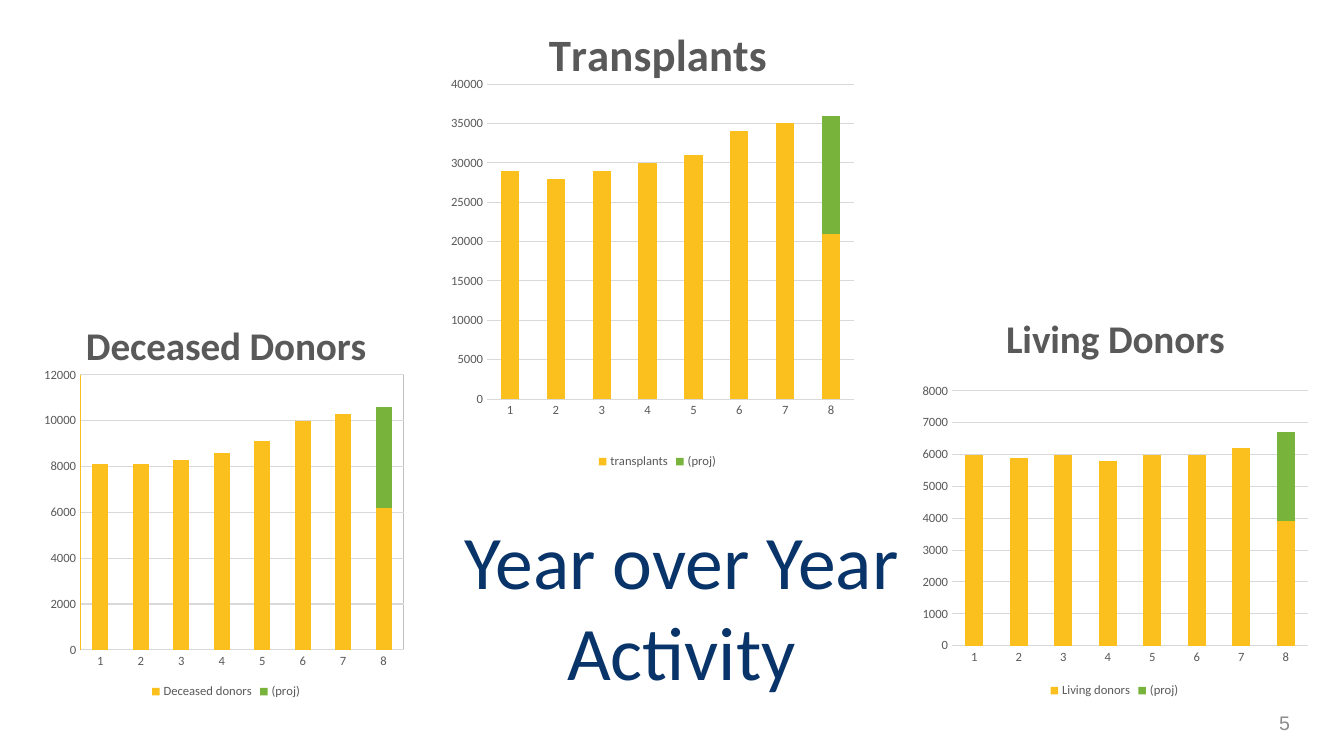
import lxml.etree
import pptx
import pptx.chart.data
import pptx.dml.color
import pptx.enum.chart
import pptx.enum.text
import pptx.oxml
import pptx.oxml.ns
import pptx.util

PX = 914400 / 100.8  # EMU in one px
GOLD, GREEN, GREY, RULE, NAVY = "FBC01E", "78B43C", "595959", "D9D9D9", "083469"
rgb = pptx.dml.color.RGBColor.from_string
qn = pptx.oxml.ns.qn


def write(p, text, size, color, font="Calibri", bold=False, align=None):
    p.alignment = align
    r = p.add_run()
    r.text = text
    r.font.name, r.font.size, r.font.bold = font, pptx.util.Pt(size), bold
    r.font.color.rgb = rgb(color)


def set_layout(parent, index, **values):
    """Give a chart part a manual layout, in fractions of the chart."""
    old = parent.find(qn("c:layout"))
    if old is not None:
        parent.remove(old)
    layout = pptx.oxml.parse_xml(
        '<c:layout %s><c:manualLayout/></c:layout>' % pptx.oxml.ns.nsdecls("c"))
    for tag, value in values.items():
        lxml.etree.SubElement(layout[0], qn("c:" + tag)).set("val", str(value))
    parent.insert(index, layout)


prs = pptx.Presentation()
prs.slide_width, prs.slide_height = int(1344 * PX), int(756 * PX)
s = prs.slides.add_slide(prs.slide_layouts[5])

# title, size, title corner, chart box, plot box, axis top, axis step, series, bars, projected
charts = [
    ("Transplants", 32, (541, 15), (439, 0, 437, 473), (487, 84, 367, 315), 40000, 5000,
     "transplants", (29000, 28000, 29000, 30000, 31000, 34000, 35000, 21000), 15000),
    ("Deceased Donors", 28, (79, 312), (33, 298, 386, 405), (80, 375, 324, 275), 12000, 2000,
     "Deceased donors", (8100, 8100, 8300, 8600, 9100, 10000, 10300, 6200), 4400),
    ("Living Donors", 28, (999, 305), (914, 291, 401, 411), (952, 391, 356, 255), 8000, 1000,
     "Living donors", (6000, 5900, 6000, 5800, 6000, 6000, 6200, 3900), 2800),
]
for title, size, corner, box, plot_box, top, step, name, bars, projected in charts:
    data = pptx.chart.data.CategoryChartData()
    data.categories = [str(n) for n in range(1, 9)]
    data.add_series(name, bars)
    data.add_series("(proj)", [0] * 7 + [projected])
    chart = s.shapes.add_chart(pptx.enum.chart.XL_CHART_TYPE.COLUMN_STACKED,
                               *[int(v * PX) for v in box], data).chart
    chart.font.name, chart.font.size = "Calibri", pptx.util.Pt(10)

    chart.has_title = True
    write(chart.chart_title.text_frame.paragraphs[0], title, size, GREY, bold=True)
    x, y, w, h = box
    set_layout(chart.element.xpath("c:chart/c:title")[0], 1, xMode="edge", yMode="edge",
               x=round((corner[0] - x) / w, 3), y=round((corner[1] - y) / h, 3))
    area = chart.element.xpath("c:chart/c:plotArea")[0]
    left, upper, width, height = plot_box
    set_layout(area, 0, layoutTarget="inner", xMode="edge", yMode="edge",
               x=round((left - x) / w, 3), y=round((upper - y) / h, 3),
               w=round(width / w, 3), h=round(height / h, 3))

    plot = chart.plots[0]
    plot.gap_width, plot.overlap, plot.vary_by_categories = 150, 100, False
    for series, color in zip(plot.series, (GOLD, GREEN)):
        series.format.fill.solid()
        series.format.fill.fore_color.rgb = rgb(color)

    chart.has_legend = True
    chart.legend.position = pptx.enum.chart.XL_LEGEND_POSITION.BOTTOM
    chart.legend.include_in_layout = False
    cat, val = chart.category_axis, chart.value_axis
    for font in (chart.legend.font, cat.tick_labels.font, val.tick_labels.font):
        font.name, font.size = "Calibri", pptx.util.Pt(9)
        font.color.rgb = rgb(GREY)
    for axis in (cat, val):
        axis.major_tick_mark = axis.minor_tick_mark = pptx.enum.chart.XL_TICK_MARK.NONE
    val.minimum_scale, val.maximum_scale, val.major_unit = 0, top, step
    for line in (cat.format.line, val.major_gridlines.format.line):
        line.color.rgb = rgb(RULE)
        line.width = pptx.util.Pt(0.75)
    val.format.line.fill.background()

    if title == "Deceased Donors":
        val.format.line.color.rgb = rgb(GOLD)
        area.append(pptx.oxml.parse_xml(
            '<c:spPr %s><a:noFill/><a:ln w="9525"><a:solidFill><a:srgbClr val="BFBFBF"/>'
            '</a:solidFill></a:ln></c:spPr>' % pptx.oxml.ns.nsdecls("c", "a")))

sp = s.shapes.title
sp.left, sp.top, sp.width, sp.height = [int(v * PX) for v in (392, 509, 579, 194)]
tf = sp.text_frame
tf.word_wrap = True
tf.auto_size = pptx.enum.text.MSO_AUTO_SIZE.SHAPE_TO_FIT_TEXT
tf.vertical_anchor = pptx.enum.text.MSO_ANCHOR.TOP
for p, line in ((tf.paragraphs[0], "Year over Year"), (tf.add_paragraph(), "Activity")):
    write(p, line, 54, NAVY, align=pptx.enum.text.PP_ALIGN.CENTER)

sp = s.shapes.add_textbox(*[int(v * PX) for v in (1072, 703, 228, 40)])
tf = sp.text_frame
tf.word_wrap = True
tf.vertical_anchor = pptx.enum.text.MSO_ANCHOR.MIDDLE
write(tf.paragraphs[0], "5", 14, "8C8C8C", font="Arial", align=pptx.enum.text.PP_ALIGN.RIGHT)

prs.save("out.pptx")
